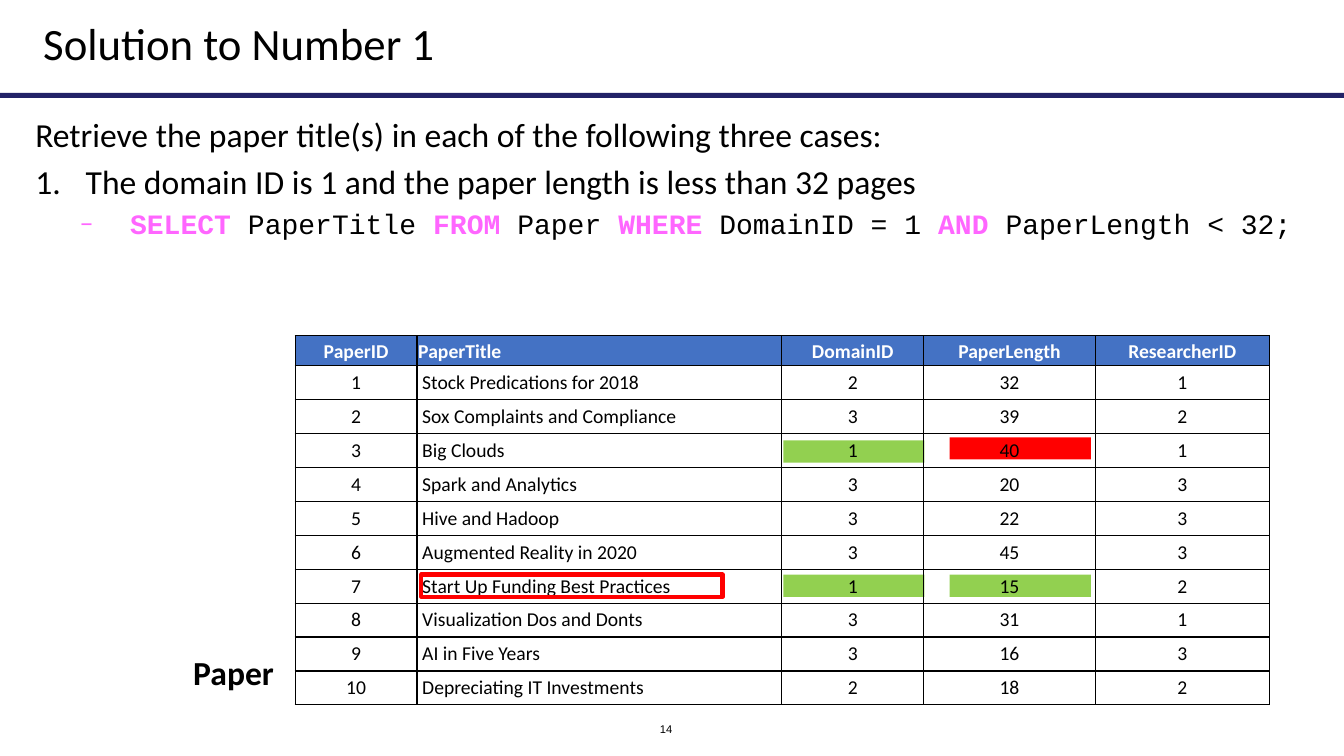
from lxml.etree import SubElement
from pptx import Presentation
from pptx.dml.color import RGBColor
from pptx.enum.shapes import MSO_SHAPE as Form
from pptx.enum.text import MSO_ANCHOR as Anchor, MSO_AUTO_SIZE as Auto, PP_ALIGN as Align
from pptx.oxml.ns import qn
from pptx.util import Cm, Pt

BLACK = RGBColor(0x00, 0x00, 0x00)
WHITE = RGBColor(0xFF, 0xFF, 0xFF)
NAVY = RGBColor(0x22, 0x22, 0x67)
BLUE = RGBColor(0x44, 0x72, 0xC4)
GREEN = RGBColor(0x92, 0xD0, 0x50)
RED = RGBColor(0xFF, 0x00, 0x00)
PINK = RGBColor(0xFF, 0x66, 0xFF)

HEADS = ["PaperID", "PaperTitle", "DomainID", "PaperLength", "ResearcherID"]
PAPERS = [
    (1, "Stock Predications for 2018", 2, 32, 1),
    (2, "Sox Complaints and Compliance", 3, 39, 2),
    (3, "Big Clouds", 1, 40, 1),
    (4, "Spark and Analytics", 3, 20, 3),
    (5, "Hive and Hadoop", 3, 22, 3),
    (6, "Augmented Reality in 2020", 3, 45, 3),
    (7, "Start Up Funding Best Practices", 1, 15, 2),
    (8, "Visualization Dos and Donts", 3, 31, 1),
    (9, "AI in Five Years", 3, 16, 3),
    (10, "Depreciating IT Investments", 2, 18, 2),
]
WIDTHS = [3.07, 9.19, 3.58, 4.32, 4.39]
QUERY = [
    ("SELECT ", True), ("PaperTitle ", False), ("FROM", True), (" Paper ", False),
    ("WHERE ", True), ("DomainID = 1 ", False), ("AND ", True),
    ("PaperLength < 32;", False),
]


class Page:
    def __init__(self, deck):
        self.slide = deck.slides.add_slide(deck.slide_layouts[6])
        self.face = "Calibri"
        self.code = "Courier New"

    def run(self, para, text, size, tint=BLACK, **more):
        run = para.add_run()
        run.text = text
        style = {"name": self.face, "size": Pt(size), "bold": False, **more}
        for key, value in style.items():
            setattr(run.font, key, value)
        run.font.color.rgb = tint

    def box(self, left, top, width, height, **more):
        """Add an empty text box and return its text frame."""
        frame = self.slide.shapes.add_textbox(
            Cm(left), Cm(top), Cm(width), Cm(height)).text_frame
        for key, value in {"word_wrap": True, **more}.items():
            setattr(frame, key, value)
        return frame

    def rect(self, left, top, width, height, fill=None, line=None):
        shape = self.slide.shapes.add_shape(
            Form.RECTANGLE, Cm(left), Cm(top), Cm(width), Cm(height))
        shape.shadow.inherit = False
        if fill is None:
            shape.fill.background()
        else:
            shape.fill.solid()
            shape.fill.fore_color.rgb = fill
        if line is None:
            shape.line.fill.background()
        else:
            shape.line.color.rgb = line
            shape.line.width = Pt(3)

    def mark(self, para, left, tag, tint, **attrs):
        """Give a paragraph a hanging bullet or number."""
        props = para._p.get_or_add_pPr()
        props.set("marL", str(Cm(left)))
        props.set("indent", str(-Cm(1.27)))
        color = SubElement(props, qn("a:buClr"))
        SubElement(color, qn("a:srgbClr"), val=str(tint))
        SubElement(props, qn("a:buFont"), typeface=self.face)
        SubElement(props, qn(tag), **attrs)

    def edge(self, cell):
        """Draw a thin black border round a cell."""
        props = cell._tc.get_or_add_tcPr()
        for side in "LRTB":
            line = SubElement(props, qn(f"a:ln{side}"), w=str(Pt(1)))
            fill = SubElement(line, qn("a:solidFill"))
            SubElement(fill, qn("a:srgbClr"), val=str(BLACK))

    def cell(self, cell, text, head, align):
        self.edge(cell)
        pad = Cm(0.03 if head else 0.13)
        style = {
            "margin_left": pad, "margin_right": pad, "margin_top": pad,
            "margin_bottom": 0 if head else pad,
            "vertical_anchor": Anchor.MIDDLE if head else Anchor.BOTTOM,
        }
        for key, value in style.items():
            setattr(cell, key, value)
        if head:
            cell.fill.solid()
            cell.fill.fore_color.rgb = BLUE
        else:
            cell.fill.background()
        para = cell.text_frame.paragraphs[0]
        para.alignment = align
        self.run(para, text, 14, WHITE if head else BLACK, bold=head)

    def table(self, left, top, widths, rows):
        table = self.slide.shapes.add_table(
            len(rows), len(widths), Cm(left), Cm(top),
            Cm(sum(widths)), Cm(0.66 * len(rows))).table
        table.horz_banding = False
        for col, width in zip(table.columns, widths):
            col.width = Cm(width)
        for r, row in enumerate(rows):
            table.rows[r].height = Cm(0.66 if r else 0.76)
            for c, value in enumerate(row):
                align = Align.LEFT if c == 1 else Align.CENTER
                self.cell(table.cell(r, c), str(value), r == 0, align)


def main():
    deck = Presentation()
    deck.slide_width, deck.slide_height = Cm(33.87), Cm(19.05)
    page = Page(deck)

    page.rect(0, 2.34, 33.9, 0.13, NAVY)
    number = page.box(15.24, 18.06, 3.1, 0.61, vertical_anchor=Anchor.MIDDLE)
    number.paragraphs[0].alignment = Align.CENTER
    page.run(number.paragraphs[0], "14", 8, name="Arial")

    for left, top, tint in [(23.93, 11.02, RED), (23.93, 14.48, GREEN),
                            (19.74, 14.48, GREEN), (19.74, 11.1, GREEN)]:
        page.rect(left, top, 3.56, 0.56, tint)

    title = page.box(0.84, 0.2, 27.3, 1.73, vertical_anchor=Anchor.MIDDLE)
    page.run(title.paragraphs[0], "Solution to Number 1", 32)

    body = page.box(0.64, 2.74, 33.02, 4.65)
    page.run(body.paragraphs[0],
             "Retrieve the paper title(s) in each of the following three cases:", 24)
    case = body.add_paragraph()
    case.space_before = Pt(4.8)
    page.mark(case, 1.27, "a:buAutoNum", BLACK, type="arabicPeriod")
    page.run(case, "The domain ID is 1 and the paper length is less than 32 pages", 24)
    query = body.add_paragraph()
    query.level = 1
    query.space_before = Pt(4)
    page.mark(query, 2.39, "a:buChar", PINK, char="–")
    for text, key in QUERY:
        page.run(query, text, 20, PINK if key else BLACK, name=page.code, bold=key)

    page.table(7.44, 8.46, WIDTHS, [HEADS, *PAPERS])
    label = page.box(4.62, 16.31, 2.57, 1.27, word_wrap=False,
                     auto_size=Auto.SHAPE_TO_FIT_TEXT)
    page.run(label.paragraphs[0], "Paper", 24, bold=True)
    page.rect(10.62, 14.48, 7.59, 0.56, line=RED)

    deck.save("out.pptx")


if __name__ == "__main__":
    main()
